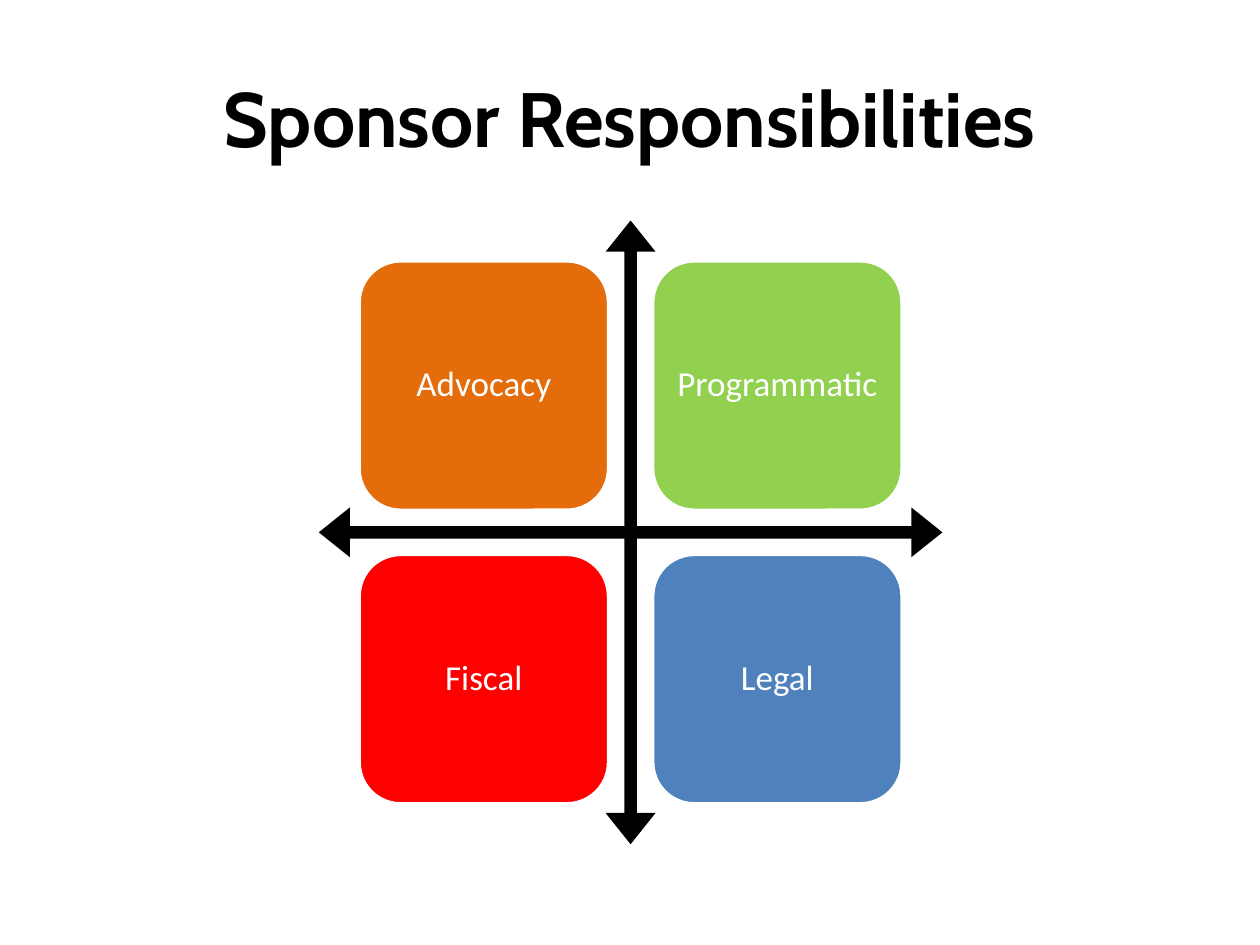
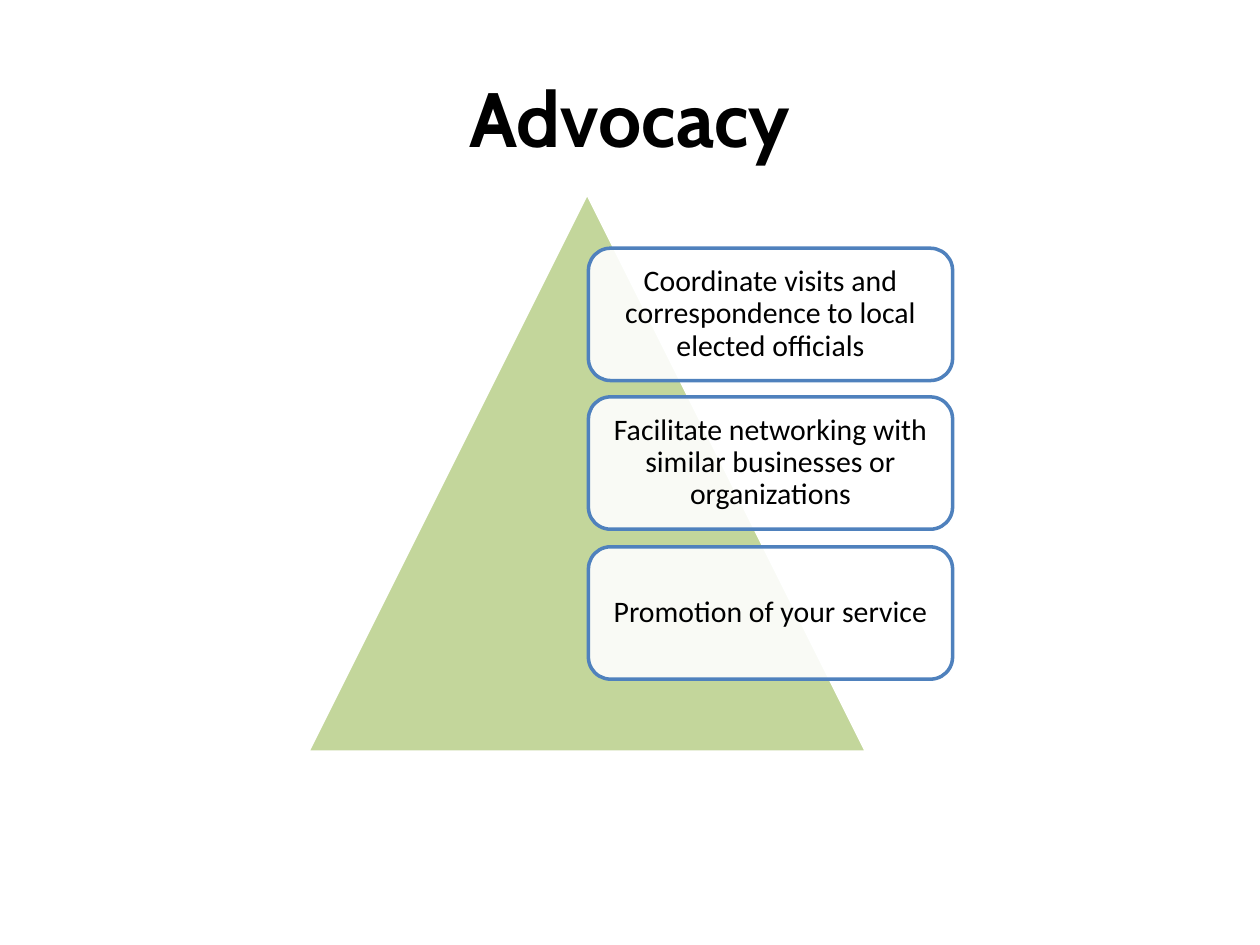
"""Build two slides on sponsor responsibilities: a four-part matrix and an advocacy pyramid."""
from lxml import etree
from pptx import Presentation
from pptx import util as u
from pptx.dml.color import RGBColor
from pptx.enum import shapes, text
from pptx.oxml.ns import qn

SCALE = 9144
BLACK = RGBColor(0x00, 0x00, 0x00)
WHITE = RGBColor(0xFF, 0xFF, 0xFF)
ORANGE = RGBColor(0xE4, 0x6C, 0x0A)
GREEN = RGBColor(0x92, 0xD0, 0x50)
RED = RGBColor(0xFF, 0x00, 0x00)
BLUE = RGBColor(0x4F, 0x81, 0xBD)
PALE_GREEN = RGBColor(0xC3, 0xD6, 0x9B)
TITLE_FONT = {"name": "Cabin", "size": u.Pt(44), "bold": True}
MATRIX_FONT = {"name": "Calibri", "size": u.Pt(20)}
PYRAMID_FONT = {"name": "Calibri", "size": u.Pt(17)}


def write(shape, wording, font_format, color, inset):
    frame = shape.text_frame
    frame_format = {"word_wrap": True, "vertical_anchor": text.MSO_ANCHOR.MIDDLE}
    for side in ("left", "top", "right", "bottom"):
        frame_format["margin_" + side] = u.Emu(inset * SCALE)
    for name, value in frame_format.items():
        setattr(frame, name, value)
    paragraph = frame.paragraphs[0]
    paragraph.text = wording
    paragraph.alignment = text.PP_ALIGN.CENTER
    for name, value in font_format.items():
        setattr(paragraph.font, name, value)
    paragraph.font.color.rgb = color
    return paragraph


def add_block(slide, preset, box, fill, line=None):
    shape = slide.shapes.add_shape(preset, *(u.Emu(length * SCALE) for length in box))
    shape.shadow.inherit = False
    shape.fill.solid()
    shape.fill.fore_color.rgb = fill
    if line is None:
        shape.line.fill.background()
    else:
        shape.line.color.rgb = line
        shape.line.width = u.Pt(2)
    return shape


presentation = Presentation()
presentation.slide_width = u.Emu(1000 * SCALE)
presentation.slide_height = u.Emu(750 * SCALE)

slides = []
for heading in ("Sponsor Responsibilities", "Advocacy"):
    slide = presentation.slides.add_slide(presentation.slide_layouts[5])
    title = slide.shapes.title
    for name, length in {"left": 50, "top": 30, "width": 900, "height": 125}.items():
        setattr(title, name, u.Emu(length * SCALE))
    write(title, heading, TITLE_FONT, BLACK, 5)
    slides.append(slide)
matrix_slide, pyramid_slide = slides

axes = add_block(matrix_slide, shapes.MSO_SHAPE.QUAD_ARROW, (253, 175, 495, 495), BLACK)
for index, ratio in enumerate((0.02, 0.04, 0.05)):
    axes.adjustments[index] = ratio

quadrants = [("Advocacy", ORANGE), ("Programmatic", GREEN), ("Fiscal", RED), ("Legal", BLUE)]
for index, (label, color) in enumerate(quadrants):
    row, column = divmod(index, 2)
    box = (285 + column * 233, 207 + row * 233, 198, 198)
    quadrant = add_block(matrix_slide, shapes.MSO_SHAPE.ROUNDED_RECTANGLE, box, color, WHITE)
    write(quadrant, label, MATRIX_FONT, WHITE, 8).line_spacing = 0.9

add_block(pyramid_slide, shapes.MSO_SHAPE.ISOSCELES_TRIANGLE, (244, 153, 444, 444), PALE_GREEN, WHITE)
duties = [
    "Coordinate visits and correspondence to local elected officials",
    "Facilitate networking with similar businesses or organizations",
    "Promotion of your service",
]
for index, duty in enumerate(duties):
    box = (467, 197 + round(index * 118.5), 289, 105)
    card = add_block(pyramid_slide, shapes.MSO_SHAPE.ROUNDED_RECTANGLE, box, WHITE, BLUE)
    fill_color = card.fill._xPr.find(qn("a:solidFill"))[0]
    etree.SubElement(fill_color, qn("a:alpha"), val="90000")
    write(card, duty, PYRAMID_FONT, BLACK, 7).line_spacing = 0.9

presentation.save("out.pptx")
